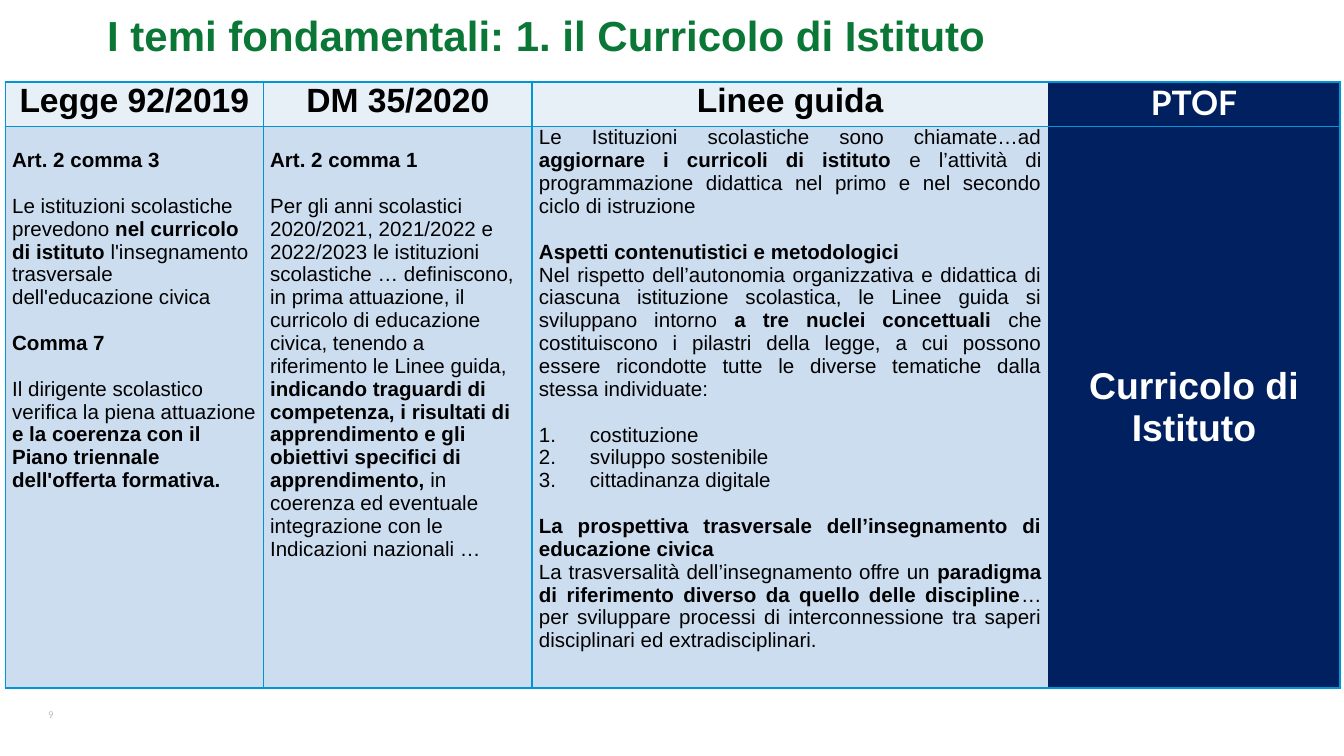
from dataclasses import dataclass

from lxml.etree import SubElement
from pptx import Presentation
from pptx.dml.color import RGBColor
from pptx.enum.text import MSO_ANCHOR, PP_ALIGN
from pptx.oxml.ns import qn
from pptx.util import Inches, Pt

GREEN = RGBColor(0x0A, 0x77, 0x36)
GREY = RGBColor(0xB9, 0xB8, 0xBB)
BLACK = RGBColor(0, 0, 0)
WHITE = RGBColor(0xFF, 0xFF, 0xFF)
NAVY = RGBColor(0x00, 0x20, 0x60)
PALE_BLUE = RGBColor(0xE7, 0xEF, 0xF7)
LIGHT_BLUE = RGBColor(0xCC, 0xDD, 0xF0)
BORDER_BLUE = RGBColor(0x00, 0x96, 0xD6)
SLIDE_WIDTH = 10
SLIDE_HEIGHT = SLIDE_WIDTH * 9 / 16
ROW_HEIGHTS = (0.33, 4.16)
BODY_LINE = 12.25
BOLD_MARK = "*"


@dataclass(frozen=True)
class Style:
    size: float
    color: RGBColor = BLACK
    font: str = "Arial"
    bold: bool = False
    align: PP_ALIGN = PP_ALIGN.LEFT


@dataclass(frozen=True)
class Passage:
    text: str
    gap: bool = False
    numbered: bool = False


@dataclass(frozen=True)
class Column:
    width: float
    heading: str
    heading_style: Style
    heading_fill: RGBColor
    passages: list[Passage]
    body_style: Style
    body_fill: RGBColor = LIGHT_BLUE
    top: float = 0
    anchor: MSO_ANCHOR = MSO_ANCHOR.TOP
    right_border: bool = True


HEADING = Style(18, bold=True, align=PP_ALIGN.CENTER)
PTOF_HEADING = Style(18, WHITE, "Lato", bold=True, align=PP_ALIGN.CENTER)
BODY = Style(11)
JUSTIFIED = Style(11, align=PP_ALIGN.JUSTIFY)
PTOF_BODY = Style(20, WHITE, bold=True, align=PP_ALIGN.CENTER)

COLUMNS = [
    Column(1.92, "Legge 92/2019", HEADING, PALE_BLUE, [
        Passage("*Art. 2 comma 3*"),
        Passage("Le istituzioni scolastiche prevedono *nel curricolo di istituto *"
                "l'insegnamento trasversale dell'educazione civica", gap=True),
        Passage("*Comma 7*", gap=True),
        Passage("Il dirigente scolastico verifica la piena attuazione *e la coerenza con il "
                "Piano triennale dell'offerta formativa.*", gap=True),
    ], BODY, top=0.17),
    Column(2, "DM 35/2020", HEADING, PALE_BLUE, [
        Passage("*Art. 2 comma 1*"),
        Passage("Per gli anni scolastici 2020/2021, 2021/2022 e 2022/2023 le istituzioni "
                "scolastiche … definiscono,", gap=True),
        Passage("in prima attuazione, il curricolo di educazione civica, tenendo a "
                "riferimento le Linee guida,"),
        Passage("*indicando traguardi di competenza, i risultati di apprendimento e gli "
                "obiettivi specifici di*"),
        Passage("*apprendimento, *in coerenza ed eventuale integrazione con le "
                "Indicazioni nazionali …"),
    ], BODY, top=0.17),
    Column(3.84, "Linee guida", HEADING, PALE_BLUE, [
        Passage("Le Istituzioni scolastiche sono chiamate…ad *aggiornare i curricoli di "
                "istituto *e l’attività di programmazione didattica nel primo e nel secondo "
                "ciclo di istruzione"),
        Passage("*Aspetti contenutistici e metodologici*", gap=True),
        Passage("Nel rispetto dell’autonomia organizzativa e didattica di ciascuna istituzione "
                "scolastica, le Linee guida si sviluppano intorno *a tre nuclei concettuali* "
                "che costituiscono i pilastri della legge, a cui possono essere ricondotte "
                "tutte le diverse tematiche dalla stessa individuate:"),
        Passage("costituzione", gap=True, numbered=True),
        Passage("sviluppo sostenibile", numbered=True),
        Passage("cittadinanza digitale", numbered=True),
        Passage("*La prospettiva trasversale dell’insegnamento di educazione civica*", gap=True),
        Passage("La trasversalità dell’insegnamento offre un *paradigma di riferimento diverso "
                "da quello delle discipline*… per sviluppare processi di interconnessione tra "
                "saperi disciplinari ed extradisciplinari. "),
    ], JUSTIFIED, right_border=False),
    Column(2.17, "PTOF", PTOF_HEADING, NAVY, [Passage("Curricolo di Istituto")],
           PTOF_BODY, NAVY, anchor=MSO_ANCHOR.MIDDLE),
]


def write_passage(paragraph, passage: Passage, style: Style) -> None:
    if passage.numbered:
        properties = paragraph._p.get_or_add_pPr()
        properties.set("marL", str(Inches(0.38)))
        properties.set("indent", str(-Inches(0.38)))
        SubElement(properties, qn("a:buAutoNum"), type="arabicPeriod")
    paragraph.alignment = style.align
    if passage.gap:
        paragraph.space_before = Pt(BODY_LINE)
    paragraph.font.size = Pt(style.size)
    paragraph.font.name = style.font
    paragraph.font.color.rgb = style.color
    pieces = [(index % 2 == 1, piece)
              for index, piece in enumerate(passage.text.split(BOLD_MARK)) if piece]
    mixed = len(pieces) > 1
    if not mixed:
        paragraph.font.bold = style.bold or pieces[0][0]
    for bold, piece in pieces:
        run = paragraph.add_run()
        run.text = piece
        if mixed:
            run.font.bold = bold


def write_passages(frame, passages: list[Passage], style: Style) -> None:
    for index, passage in enumerate(passages):
        paragraph = frame.add_paragraph() if index else frame.paragraphs[0]
        write_passage(paragraph, passage, style)


def add_border(cell, side: str, visible: bool) -> None:
    line = SubElement(cell._tc.get_or_add_tcPr(), qn(f"a:{side}"), w=str(Pt(1)))
    if visible:
        fill = SubElement(line, qn("a:solidFill"))
        SubElement(fill, qn("a:srgbClr"), val=str(BORDER_BLUE))
    else:
        SubElement(line, qn("a:noFill"))


def fill_cell(cell, passages: list[Passage], style: Style, fill: RGBColor,
              left_border: bool, right_border: bool, top: float = 0,
              anchor: MSO_ANCHOR = MSO_ANCHOR.TOP) -> None:
    cell.margin_left = cell.margin_right = Inches(0.05)
    cell.margin_top, cell.margin_bottom = Inches(top), 0
    cell.vertical_anchor = anchor
    for side, visible in (("lnL", left_border), ("lnR", right_border),
                          ("lnT", True), ("lnB", True)):
        add_border(cell, side, visible)
    cell.fill.solid()
    cell.fill.fore_color.rgb = fill
    write_passages(cell.text_frame, passages, style)


def add_comparison(slide) -> None:
    width = sum(column.width for column in COLUMNS)
    table = slide.shapes.add_table(len(ROW_HEIGHTS), len(COLUMNS), Inches(0.04), Inches(0.61),
                                   Inches(width), Inches(sum(ROW_HEIGHTS))).table
    for row, height in zip(table.rows, ROW_HEIGHTS):
        row.height = Inches(height)
    left_border = True
    for index, column in enumerate(COLUMNS):
        table.columns[index].width = Inches(column.width)
        fill_cell(table.cell(0, index), [Passage(column.heading)], column.heading_style,
                  column.heading_fill, left_border, column.right_border)
        fill_cell(table.cell(1, index), column.passages, column.body_style, column.body_fill,
                  left_border, column.right_border, column.top, column.anchor)
        left_border = column.right_border


def add_label(slide, text: str, left: float, top: float, width: float, height: float,
              style: Style, wrap: bool = True) -> None:
    frame = slide.shapes.add_textbox(Inches(left), Inches(top),
                                     Inches(width), Inches(height)).text_frame
    frame.word_wrap = wrap
    frame.margin_left = frame.margin_right = frame.margin_top = frame.margin_bottom = 0
    frame.vertical_anchor = MSO_ANCHOR.MIDDLE
    write_passages(frame, [Passage(text)], style)


def main() -> None:
    presentation = Presentation()
    presentation.slide_width = Inches(SLIDE_WIDTH)
    presentation.slide_height = Inches(SLIDE_HEIGHT)
    slide = presentation.slides.add_slide(presentation.slide_layouts[6])
    add_label(slide, "9", 0.36, 5.24, 0.35, 0.16, Style(5, GREY, "Lato"), wrap=False)
    add_comparison(slide)
    add_label(slide, "I temi fondamentali: 1. il Curricolo di Istituto", 0.28, 0.02, 7.58, 0.47,
              Style(22.5, GREEN, bold=True, align=PP_ALIGN.CENTER))
    presentation.save("out.pptx")


if __name__ == "__main__":
    main()
